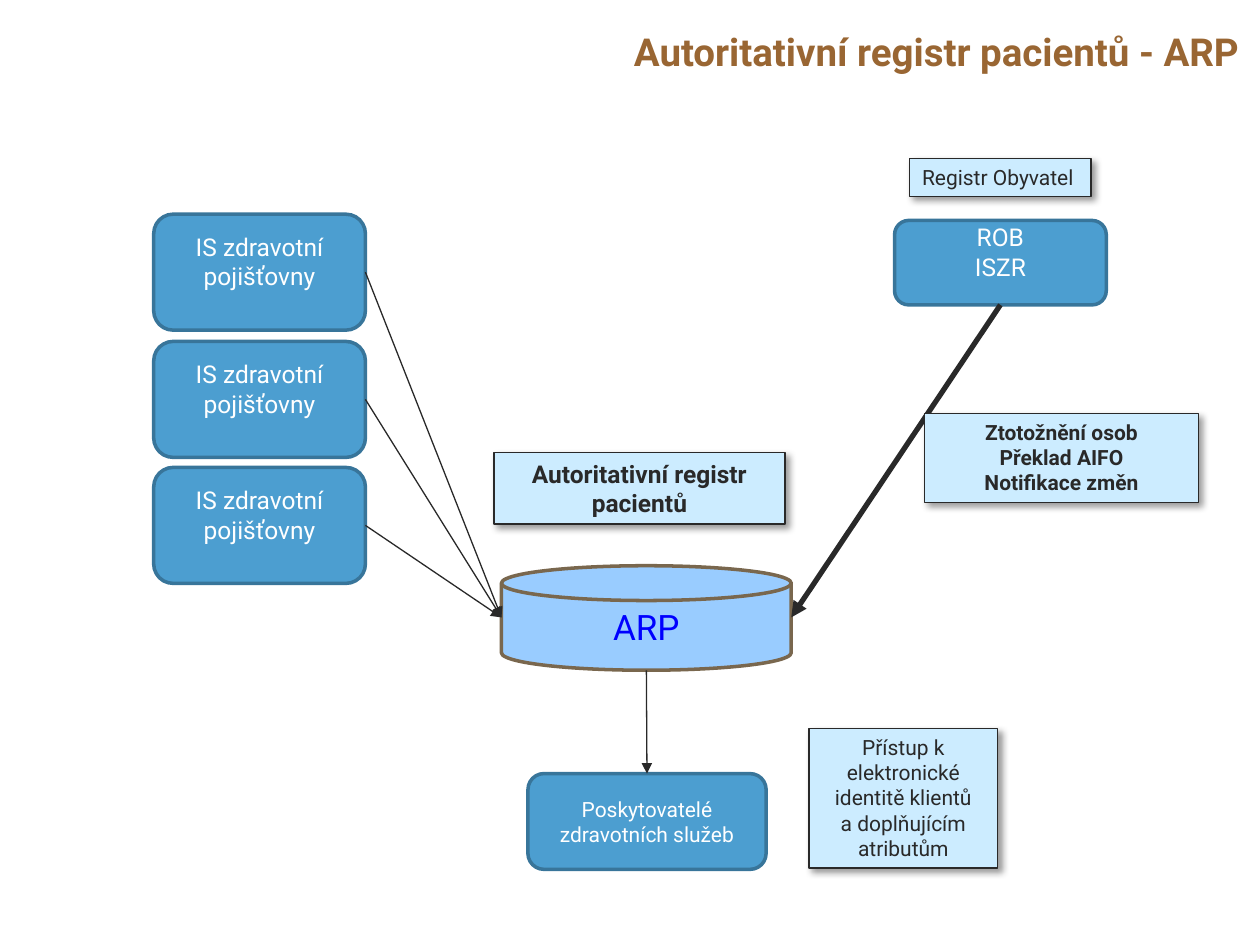
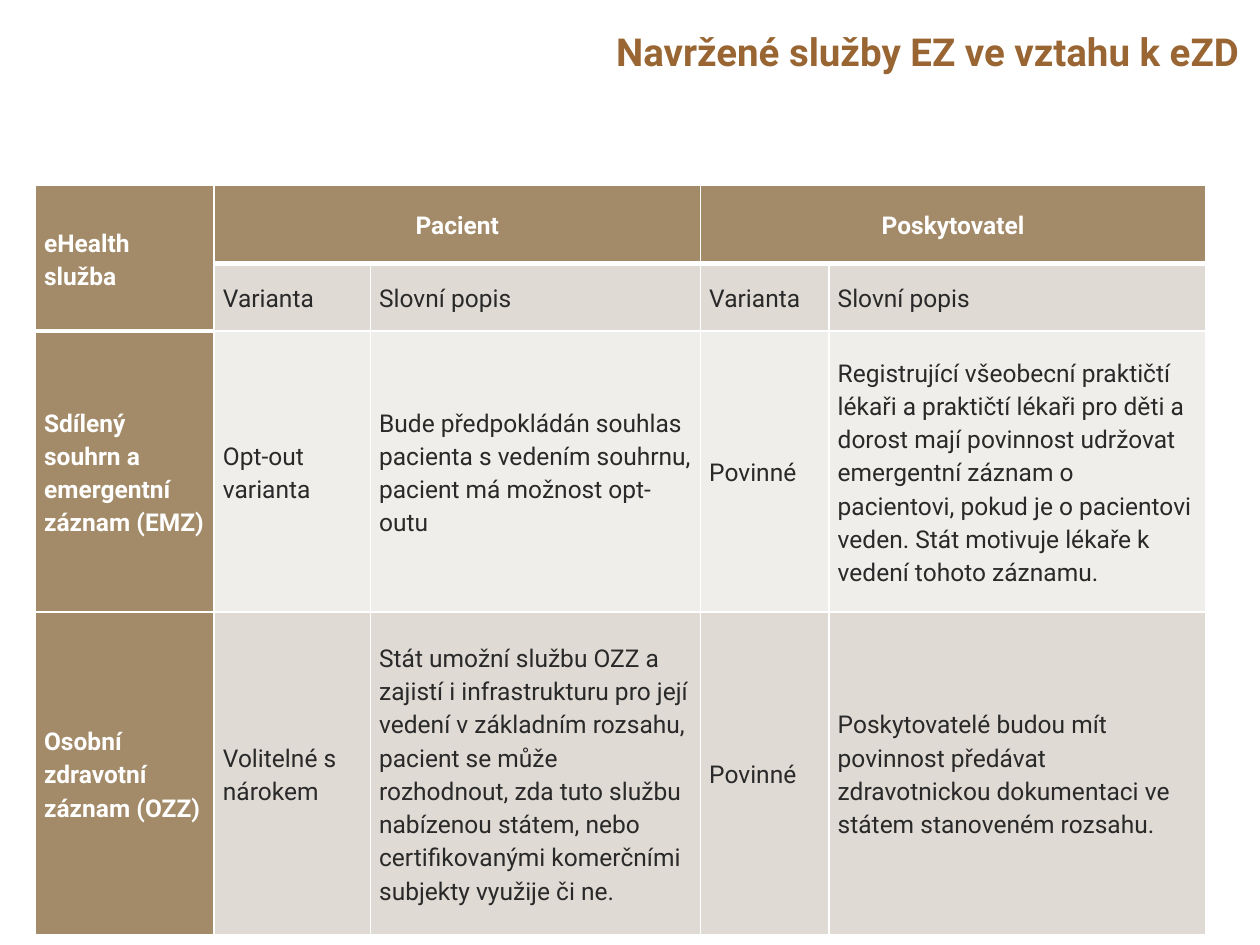
"""Build two slides on the patient registry and the proposed eHealth services."""
from typing import NamedTuple

import lxml.etree
import pptx
import pptx.dml.color
import pptx.enum.shapes
import pptx.enum.text
import pptx.oxml
import pptx.oxml.ns
import pptx.util

SCALE = 9144
FONT = "Roboto"
WHITE, INK, TITLE = "FFFFFF", "292929", "996633"
BLUE, EDGE = "4C9ED0", "38759A"
SKY, RIM, LINK = "99CCFF", "79674E", "0000FF"
NOTE = "CCECFF"
HEAD, DARK, LIGHT = "A38B69", "E0DAD4", "F0EEEB"

KIND = pptx.enum.shapes.MSO_SHAPE
ALIGN = pptx.enum.text.PP_ALIGN
ANCHOR = pptx.enum.text.MSO_ANCHOR
TOP, BOTTOM, RIGHT = 0, 2, 3


class Box(NamedTuple):
    text: str
    left: int
    top: int
    width: int
    height: int
    size: int = 14
    fill: str = BLUE
    edge: str = EDGE
    ink: str = WHITE
    weight: float = 2
    kind: KIND = KIND.ROUNDED_RECTANGLE
    anchor: ANCHOR = ANCHOR.MIDDLE
    align: ALIGN = ALIGN.CENTER
    bold: bool = False
    foot: int = 5
    shade: bool = False


def note(text: str, left: int, top: int, width: int, height: int, **style) -> Box:
    look = dict(size=12, fill=NOTE, edge=INK, ink=INK, weight=0.75,
                kind=KIND.RECTANGLE, anchor=ANCHOR.TOP, shade=True)
    return Box(text, left, top, width, height, **(look | style))


PAYERS = [Box("IS zdravotní pojišťovny", 122, top, 168, 92, foot=22)
          for top in (170, 271, 371)]
ROB = Box("ROB\nISZR", 710, 175, 168, 67, foot=22)
CARE = Box("Poskytovatelé zdravotních služeb", 419, 614, 189, 76, size=12)
ARP = Box("ARP", 398, 449, 230, 83, size=20, fill=SKY, edge=RIM, ink=LINK,
          kind=KIND.FLOWCHART_MAGNETIC_DISK)
NOTES = [
    note("Autoritativní registr\npacientů", 392, 359, 231, 57, size=14, bold=True),
    note("Registr Obyvatel", 722, 126, 144, 30, align=ALIGN.LEFT),
    note("Přístup k elektronické identitě klientů\na doplňujícím atributům",
         642, 578, 150, 111),
    note("Ztotožnění osob\nPřeklad AIFO\nNotifikace změn", 734, 328, 217, 71, bold=True),
]

COLS = [142, 124, 262, 102, 299]
ROWS = [62, 53, 223, 256]
CELLS = [
    ["eHealth služba", "Pacient", "", "Poskytovatel", ""],
    ["", "Varianta", "Slovní popis", "Varianta", "Slovní popis"],
    ["Sdílený souhrn a emergentní záznam (EMZ)", "Opt-out varianta",
     "Bude předpokládán souhlas pacienta s vedením souhrnu, pacient má možnost opt-outu",
     "Povinné",
     "Registrující všeobecní praktičtí lékaři a praktičtí lékaři pro děti a dorost mají "
     "povinnost udržovat emergentní záznam o pacientovi, pokud je o pacientovi veden. "
     "Stát motivuje lékaře k vedení tohoto záznamu."],
    ["Osobní zdravotní záznam (OZZ)", "Volitelné s nárokem",
     "Stát umožní službu OZZ a zajistí i infrastrukturu pro její vedení v základním "
     "rozsahu, pacient se může rozhodnout, zda tuto službu nabízenou státem, nebo "
     "certifikovanými komerčními subjekty využije či ne.",
     "Povinné",
     "Poskytovatelé budou mít povinnost předávat zdravotnickou dokumentaci ve státem "
     "stanoveném rozsahu."],
]
MERGES = [((0, 0), (1, 0)), ((0, 1), (0, 2)), ((0, 3), (0, 4))]


def px(num: int) -> int:
    return pptx.util.Emu(num * SCALE)


def hue(code: str) -> pptx.dml.color.RGBColor:
    return pptx.dml.color.RGBColor.from_string(code)


def add_xml(host, tag: str, **attrs):
    return lxml.etree.SubElement(host, pptx.oxml.ns.qn(tag), attrs)


def write(frame, text: str, *, size: int, ink: str, bold: bool = False,
          align: ALIGN = ALIGN.LEFT, pitch: float = 1.0) -> None:
    frame.word_wrap = True
    for num, line in enumerate(text.split("\n")):
        para = frame.add_paragraph() if num else frame.paragraphs[0]
        para.alignment = align
        para.line_spacing = pitch
        run = para.add_run()
        run.text = line
        font = run.font
        font.name, font.size, font.bold = FONT, pptx.util.Pt(size), bold
        font.color.rgb = hue(ink)


def add_slide(deck, title: str):
    slide = deck.slides.add_slide(deck.slide_layouts[6])
    frame = slide.shapes.add_textbox(px(272), 0, px(721), px(85)).text_frame
    frame.vertical_anchor = ANCHOR.MIDDLE
    write(frame, title, size=22, ink=TITLE, bold=True, align=ALIGN.RIGHT, pitch=0.9)
    return slide


def add_box(slide, box: Box):
    shape = slide.shapes.add_shape(
        box.kind, px(box.left), px(box.top), px(box.width), px(box.height))
    shape.shadow.inherit = False
    shape.fill.solid()
    shape.fill.fore_color.rgb = hue(box.fill)
    shape.line.color.rgb = hue(box.edge)
    shape.line.width = pptx.util.Pt(box.weight)
    if box.shade:
        effects = shape._element.spPr.find(pptx.oxml.ns.qn("a:effectLst"))
        cast = add_xml(effects, "a:outerShdw", blurRad="50800", dist="38100",
                       dir="2700000", algn="tl", rotWithShape="0")
        tint = add_xml(cast, "a:srgbClr", val="000000")
        add_xml(tint, "a:alpha", val="40000")
    frame = shape.text_frame
    frame.vertical_anchor = box.anchor
    frame.margin_bottom = px(box.foot)
    write(frame, box.text, size=box.size, ink=box.ink, bold=box.bold, align=box.align)
    return shape


def add_arrow(slide, start: tuple[int, int], end: tuple[int, int], weight: float = 0.75):
    arrow = slide.shapes.add_connector(
        pptx.enum.shapes.MSO_CONNECTOR.STRAIGHT, *map(px, start + end))
    arrow.line.color.rgb = hue(INK)
    arrow.line.width = pptx.util.Pt(weight)
    add_xml(arrow.line._get_or_add_ln(), "a:tailEnd", type="triangle")
    add_xml(arrow._element.spPr, "a:effectLst")
    return arrow


def draw_map(deck) -> None:
    slide = add_slide(deck, "Autoritativní registr pacientů - ARP")
    add_box(slide, ARP)
    middle = ARP.top + ARP.height // 2
    for payer in PAYERS:
        shape = add_box(slide, payer)
        side = payer.left + payer.width, payer.top + payer.height // 2
        add_arrow(slide, side, (ARP.left, middle)).begin_connect(shape, RIGHT)
    source = add_box(slide, ROB)
    base = ROB.left + ROB.width // 2, ROB.top + ROB.height
    add_arrow(slide, base, (ARP.left + ARP.width, middle), 3).begin_connect(source, BOTTOM)
    care = add_box(slide, CARE)
    base = ARP.left + ARP.width // 2, ARP.top + ARP.height
    add_arrow(slide, base, (CARE.left + CARE.width // 2, CARE.top)).end_connect(care, TOP)
    for label in NOTES:
        add_box(slide, label)


def add_edge(cell, side: str, weight: float) -> None:
    line = add_xml(cell._tc.get_or_add_tcPr(), f"a:ln{side}",
                   w=str(pptx.util.Pt(weight)))
    add_xml(add_xml(line, "a:solidFill"), "a:srgbClr", val=WHITE)


def draw_table(deck) -> None:
    slide = add_slide(deck, "Navržené služby EZ ve vztahu k eZD")
    table = slide.shapes.add_table(len(ROWS), len(COLS), px(28), px(147),
                                   px(sum(COLS)), px(sum(ROWS))).table
    for col, width in zip(table.columns, COLS):
        col.width = px(width)
    for row, height in zip(table.rows, ROWS):
        row.height = px(height)
    for first, last in MERGES:
        table.cell(*first).merge(table.cell(*last))
    for i, row in enumerate(CELLS):
        for j, text in enumerate(row):
            cell = table.cell(i, j)
            head = i == 0 or j == 0
            thick = i == 0 or (i, j) == (1, 0)
            for side, weight in (("L", 1), ("R", 1), ("B", 3 if thick else 1)):
                add_edge(cell, side, weight)
            cell.fill.solid()
            cell.fill.fore_color.rgb = hue(HEAD if head else DARK if i % 2 else LIGHT)
            cell.vertical_anchor = ANCHOR.MIDDLE
            cell.margin_left = cell.margin_right = px(7)
            cell.margin_top = cell.margin_bottom = 0
            if text:
                write(cell.text_frame, text, size=14, ink=WHITE if head else INK,
                      bold=head, pitch=1.15,
                      align=ALIGN.CENTER if i == 0 and j else ALIGN.LEFT)


def main() -> None:
    deck = pptx.Presentation()
    deck.slide_width, deck.slide_height = px(1000), px(750)
    draw_map(deck)
    draw_table(deck)
    deck.save("out.pptx")


if __name__ == "__main__":
    main()
